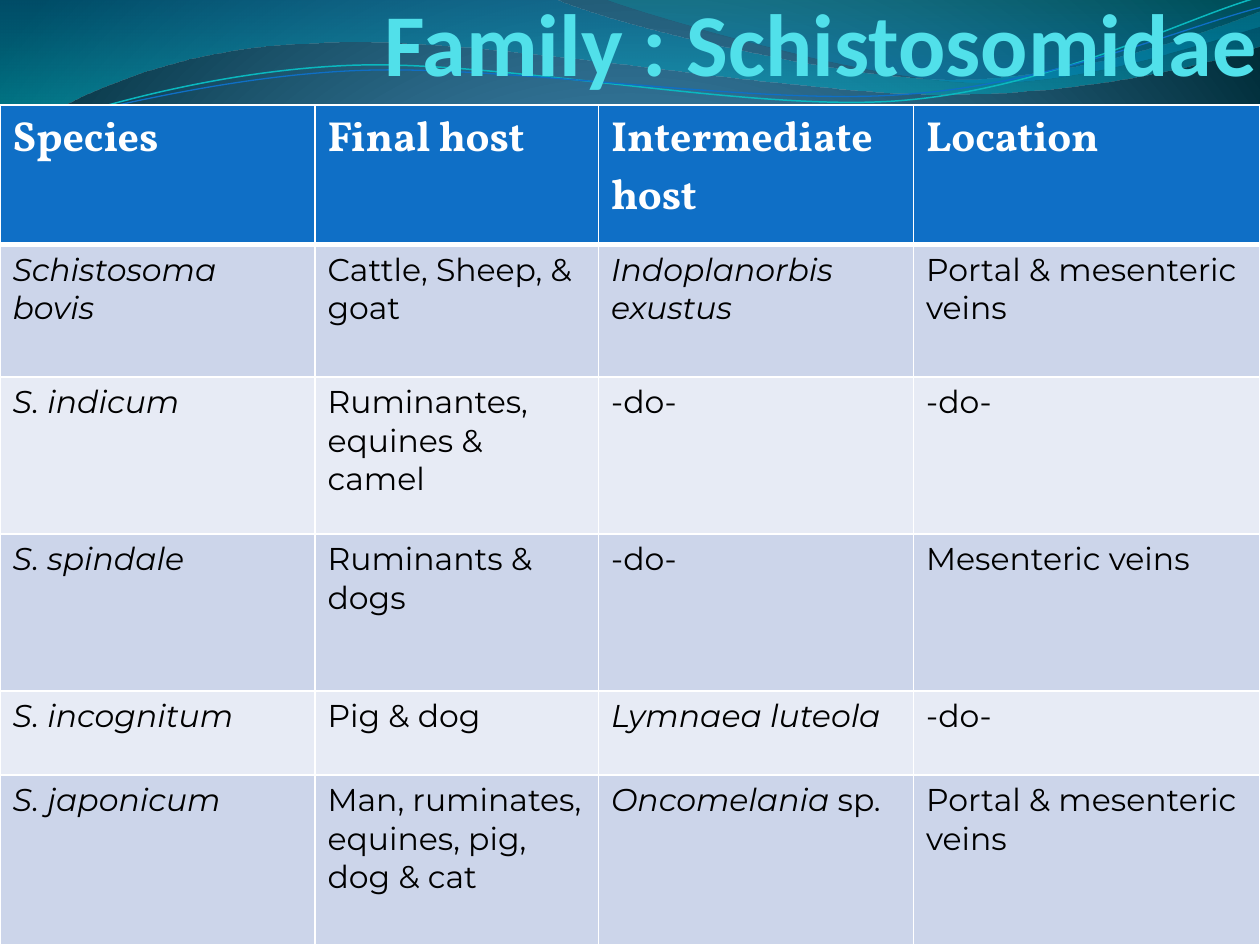
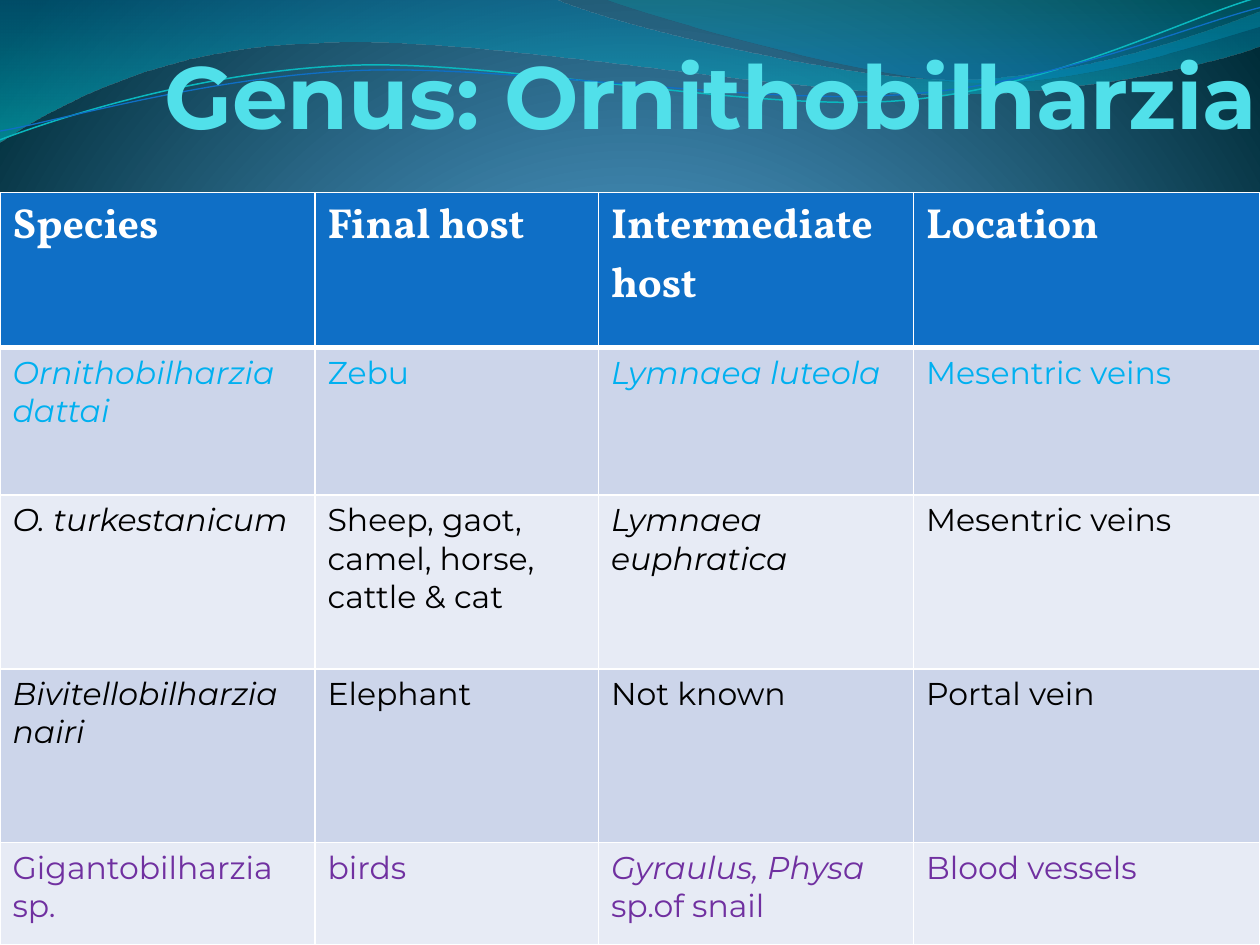
"""Build two slides tabulating blood flukes, their hosts and locations."""
from dataclasses import dataclass

from lxml.etree import SubElement
from pptx import Presentation
from pptx.dml.color import RGBColor
from pptx.enum.text import MSO_ANCHOR, PP_ALIGN
from pptx.oxml.ns import qn
from pptx.util import Pt


@dataclass(frozen=True)
class Theme:
    title: str = "51E0EA"
    header: str = "0F6FC6"
    bands: tuple = ("CCD5EA", "E7EBF5")
    white: str = "FFFFFF"
    black: str = "000000"
    sky: str = "00B0F0"
    purple: str = "7030A0"
    backdrop: tuple = ((0, "4AA0D6", 100), (25, "4C98C7", 100), (100, "002C38", 100))
    header_font: str = "Vollkorn"
    body_font: str = "Montserrat"
    title_size: float = 50.4
    header_size: float = 24
    body_size: float = 18


THEME = Theme()
SLIDE_WIDTH, SLIDE_HEIGHT = 720, 540
COLUMN_WIDTHS = (180, 162, 180, 198)
HEADINGS = ("Species", "Final host", "Intermediate host", "Location")

FAMILIES = [
    {
        "title": "Family : Schistosomidae",
        "title_font": "Calibri",
        "title_height": 54,
        "table_top": 60,
        "row_heights": (79.8, 75.6, 89.8, 89.8, 47.9, 97.1),
        "species": [
            (THEME.black, "*Schistosoma bovis*", "Cattle, Sheep, & goat",
             "*Indoplanorbis exustus*", "Portal & mesenteric veins"),
            (THEME.black, "*S. indicum*", "Ruminantes, equines & camel", "-do-", "-do-"),
            (THEME.black, "*S. spindale*", "Ruminants & dogs", "-do-", "Mesenteric veins"),
            (THEME.black, "*S. incognitum*", "Pig & dog", "*Lymnaea luteola*", "-do-"),
            (THEME.black, "*S. japonicum*", "Man, ruminates, equines, pig, dog & cat",
             "*Oncomelania* sp.", "Portal & mesenteric veins"),
        ],
    },
    {
        "title": "Genus: Ornithobilharzia",
        "title_font": "Montserrat",
        "title_height": 84.2,
        "table_top": 110,
        "row_heights": (88.6, 84.2, 99.4, 99.4, 58.4),
        "species": [
            (THEME.sky, "*Ornithobilharzia dattai*", "Zebu", "*Lymnaea luteola*",
             "Mesentric veins"),
            (THEME.black, "*O. turkestanicum*", "Sheep, gaot, camel, horse, cattle & cat",
             "*Lymnaea euphratica*", "Mesentric veins"),
            (THEME.black, "*Bivitellobilharzia nairi*", "Elephant", "Not known", "Portal vein"),
            (THEME.purple, "Gigantobilharzia sp.", "birds",
             "*Gyraulus, Physa *sp.of snail", "Blood vessels"),
        ],
    },
]

WAVES = [
    {
        "start": (0, 0),
        "segments": [
            [(316.8, -0.7)],
            [(342.7, 12.2), (478.1, 45.4), (545.8, 45.4)],
            [(614.2, 45.4), (689.8, 18.7), (720, 6.5)],
            [(720.7, 25.9)],
            [(707.8, 31.7), (626.4, 54.7), (537.1, 54)],
            [(447.8, 54), (275, 20.2), (185, 24.5)],
            [(92.9, 25.9), (33.1, 59.8), (-0.7, 81.4)],
        ],
        "stops": ((0, "0074A1", 45), (100, "00C6CF", 55)),
    },
    {
        "start": (344.9, -0.7),
        "segments": [
            [(366.5, 7.9), (491, 44.6), (553.7, 46.8)],
            [(616.3, 49.7), (691.9, 23), (720, 15.1)],
            [(720, 0)],
        ],
        "stops": ((0, "00A1A9", 30), (80, "008BBF", 45)),
    },
    {
        "start": (0, 79.9),
        "segments": [
            [(34.6, 67), (113.8, 41), (199.4, 37.4)],
            [(284.4, 33.8), (427, 64.1), (513.4, 57.6)],
            [(599.8, 51.1), (675.4, 10.8), (718.6, -1.4)],
        ],
        "line": ("0AB8BF", 0.85),
    },
    {
        "start": (0, 74.9),
        "segments": [
            [(33.8, 69.1), (118.1, 43.9), (203.8, 40.3)],
            [(290.2, 36.7), (430.6, 60.5), (516.2, 54)],
            [(601.9, 48.2), (677.5, 15.1), (720, 4.3)],
        ],
        "line": ("0F6FC6", 0.75),
    },
]


def write_text(frame, text, *, font, size, color, bold=False, align=PP_ALIGN.LEFT):
    """Write text into a frame; stretches between asterisks are italic."""
    paragraph = frame.paragraphs[0]
    paragraph.alignment = align
    for index, stretch in enumerate(text.split("*")):
        if stretch:
            run = paragraph.add_run()
            run.text = stretch
            run.font.name = font
            run.font.size = Pt(size)
            run.font.bold = bold
            run.font.italic = index % 2 == 1
            run.font.color.rgb = RGBColor.from_string(color)


def set_gradient(fill, owner, stops, focus=None):
    """Give the owner's fill these stops, radial if a focus is named, else downward."""
    fill.gradient()
    gradient = next(owner.iter(qn("a:gradFill")))
    for child in list(gradient):
        gradient.remove(child)
    stop_list = SubElement(gradient, qn("a:gsLst"))
    for position, color, opacity in stops:
        stop = SubElement(stop_list, qn("a:gs"), pos=str(position * 1000))
        shade = SubElement(stop, qn("a:srgbClr"), val=color)
        if opacity < 100:
            SubElement(shade, qn("a:alpha"), val=str(opacity * 1000))
    if focus:
        circle = SubElement(gradient, qn("a:path"), path="circle")
        edges = {side: str(share * 1000) for side, share in zip("ltrb", focus)}
        SubElement(circle, qn("a:fillToRect"), **edges)
    else:
        SubElement(gradient, qn("a:lin"), ang="5400000", scaled="1")


def bend(shape, segments):
    """Turn the straight steps of a freeform into cubic curves where controls are given."""
    for step, segment in zip(list(shape.element.iter(qn("a:lnTo"))), segments):
        if len(segment) == 3:
            outline = step.getparent()
            curve = SubElement(outline, qn("a:cubicBezTo"))
            outline.replace(step, curve)
            for x, y in segment:
                SubElement(curve, qn("a:pt"), x=str(Pt(x) - shape.left),
                           y=str(Pt(y) - shape.top))


def add_wave(slide, wave):
    """Draw one wave as a filled band or an open line and return it."""
    corners = [wave["start"], *(segment[-1] for segment in wave["segments"])]
    points = [(Pt(x), Pt(y)) for x, y in corners]
    builder = slide.shapes.build_freeform(*points[0])
    builder.add_line_segments(points[1:], close="stops" in wave)
    shape = builder.convert_to_shape()
    bend(shape, wave["segments"])
    shape.shadow.inherit = False
    if "stops" in wave:
        set_gradient(shape.fill, shape.element, wave["stops"])
        shape.line.fill.background()
    else:
        color, width = wave["line"]
        shape.fill.background()
        shape.line.color.rgb = RGBColor.from_string(color)
        shape.line.width = Pt(width)
    return shape


def decorate_master(master, slide):
    """Give the master the backdrop and the waves, which are drawn on a slide first."""
    set_gradient(master.background.fill, master.element, THEME.backdrop,
                 focus=(10, 110, 10, 100))
    tree = master.element.find(f".//{qn('p:spTree')}")
    for number, wave in enumerate(WAVES, start=20):
        element = add_wave(slide, wave).element
        next(element.iter(qn("p:cNvPr"))).set("id", str(number))
        tree.append(element)


def add_title(slide, family):
    """Put the title at the right edge, resting on the bottom of its box."""
    box = slide.shapes.add_textbox(0, 0, Pt(SLIDE_WIDTH), Pt(family["title_height"]))
    frame = box.text_frame
    frame.word_wrap = True
    frame.vertical_anchor = MSO_ANCHOR.BOTTOM
    frame.margin_left = frame.margin_top = frame.margin_bottom = 0
    frame.margin_right = Pt(1.44)
    write_text(frame, family["title"], font=family["title_font"], size=THEME.title_size,
               color=THEME.title, bold=True, align=PP_ALIGN.RIGHT)


def style_cell(cell, fill, top, bottom):
    """Give a cell white borders and a plain fill."""
    properties = cell._tc.get_or_add_tcPr()
    for side, width in (("L", 1), ("R", 1), ("T", top), ("B", bottom)):
        border = SubElement(properties, qn(f"a:ln{side}"), w=str(Pt(width)))
        paint = SubElement(border, qn("a:solidFill"))
        SubElement(paint, qn("a:srgbClr"), val=THEME.white)
    cell.fill.solid()
    cell.fill.fore_color.rgb = RGBColor.from_string(fill)


def add_species_table(slide, family):
    """Add the header row and the banded species rows."""
    heights = family["row_heights"]
    table = slide.shapes.add_table(
        len(heights), len(HEADINGS), 0, Pt(family["table_top"]),
        Pt(SLIDE_WIDTH), Pt(sum(heights))).table
    table.first_row = table.horz_banding = False
    for column, width in zip(table.columns, COLUMN_WIDTHS):
        column.width = Pt(width)
    for row, height in zip(table.rows, heights):
        row.height = Pt(height)
    for column, heading in enumerate(HEADINGS):
        cell = table.cell(0, column)
        style_cell(cell, THEME.header, 1, 3)
        write_text(cell.text_frame, heading, font=THEME.header_font,
                   size=THEME.header_size, color=THEME.white, bold=True)
    for row, (color, *entries) in enumerate(family["species"], start=1):
        for column, entry in enumerate(entries):
            cell = table.cell(row, column)
            style_cell(cell, THEME.bands[(row - 1) % 2], 3 if row == 1 else 1, 1)
            write_text(cell.text_frame, entry, font=THEME.body_font,
                       size=THEME.body_size, color=color)


def main():
    """Build and save both slides."""
    deck = Presentation()
    deck.slide_width, deck.slide_height = Pt(SLIDE_WIDTH), Pt(SLIDE_HEIGHT)
    slides = [deck.slides.add_slide(deck.slide_layouts[6]) for _ in FAMILIES]
    decorate_master(deck.slide_master, slides[0])
    for slide, family in zip(slides, FAMILIES):
        add_title(slide, family)
        add_species_table(slide, family)
    deck.save("out.pptx")


if __name__ == "__main__":
    main()
